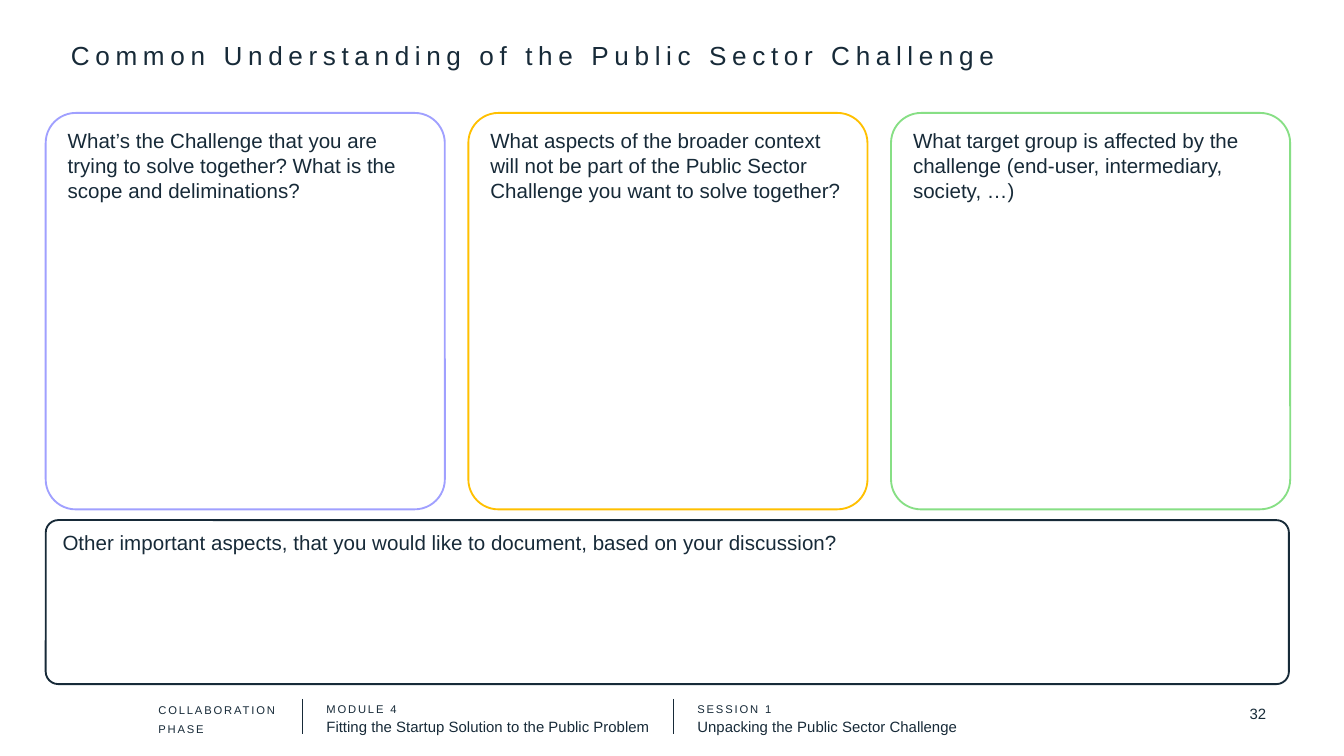
from lxml import etree
from pptx import Presentation
from pptx.dml.color import RGBColor
from pptx.enum.shapes import MSO_CONNECTOR, MSO_SHAPE
from pptx.enum.text import MSO_ANCHOR, PP_ALIGN
from pptx.oxml.ns import qn
from pptx.util import Inches, Pt

ROUND = MSO_SHAPE.ROUNDED_RECTANGLE
STRAIGHT = MSO_CONNECTOR.STRAIGHT
TOP, MIDDLE = MSO_ANCHOR.TOP, MSO_ANCHOR.MIDDLE
LEFT, RIGHT = PP_ALIGN.LEFT, PP_ALIGN.RIGHT

INK = RGBColor(0x17, 0x2A, 0x38)
LILAC = RGBColor(0xA0, 0xA0, 0xFF)
AMBER = RGBColor(0xFF, 0xC0, 0x00)
GREEN = RGBColor(0x87, 0xDF, 0x85)
FONT = "Arial"

EDGE, LAST = 0.34, 6.63
CARD_TOP = 0.84
CARD_W, CARD_H = 2.97, 2.95

CARDS = [
    (LILAC, "What’s the Challenge that you are trying to solve together? "
            "What is the scope and deliminations?"),
    (AMBER, "What aspects of the broader context will not be part of the "
            "Public Sector Challenge you want to solve together?"),
    (GREEN, "What target group is affected by the challenge "
            "(end-user, intermediary, society, …)"),
]
OTHER = ("Other important aspects, that you would like to document, "
         "based on your discussion?")


def add_run(par, text, size, track=0):
    """Add a run; track is the letter spacing in points."""
    run = par.add_run()
    run.text = text
    run.font.name = FONT
    run.font.size = Pt(size)
    run.font.color.rgb = INK
    if track:
        run._r.get_or_add_rPr().set("spc", str(track * 100))


def add_text(slide, box, lines, pitch=None, anchor=TOP, align=LEFT):
    """Add a text box with one paragraph per (text, size, track) line."""
    frame = slide.shapes.add_textbox(*map(Inches, box)).text_frame
    frame.word_wrap = True
    frame.vertical_anchor = anchor
    frame.margin_left = frame.margin_right = Inches(0.1)
    frame.margin_top = frame.margin_bottom = Inches(0.1)
    for i, line in enumerate(lines):
        par = frame.add_paragraph() if i else frame.paragraphs[0]
        par.alignment = align
        if pitch:
            par.line_spacing = Pt(pitch)
        add_run(par, *line)


def add_card(slide, box, color, text):
    card = slide.shapes.add_shape(ROUND, *map(Inches, box))
    card.adjustments[0] = 0.076
    card.shadow.inherit = False
    card.fill.background()
    card.line.color.rgb = color
    card.line.width = Pt(1)
    frame = card.text_frame
    frame.word_wrap = True
    frame.vertical_anchor = TOP
    par = frame.paragraphs[0]
    par.alignment = LEFT
    add_run(par, text, 11)


def add_rule(slide, x):
    """Add an upright footer divider."""
    rule = slide.shapes.add_connector(
        STRAIGHT, Inches(x), Inches(5.2), Inches(x), Inches(5.46))
    rule.line.color.rgb = INK
    rule.line.width = Pt(0.5)
    etree.SubElement(rule._element.spPr, qn("a:effectLst"))


def add_footer(slide):
    add_text(slide, (1.08, 5.09, 1.15, 0.47),
             [("COLLABORATION", 6, 1), ("PHASE", 6, 1)], 10.2)
    add_text(slide, (2.33, 5.08, 3.32, 0.47),
             [("MODULE 4", 6, 1),
              ("Fitting the Startup Solution to the Public Problem", 8)], 10.6)
    add_text(slide, (5.09, 5.08, 2.99, 0.47),
             [("SESSION 1", 6, 1),
              ("Unpacking the Public Sector Challenge", 8)], 10.6)
    for x in (2.25, 5.01):
        add_rule(slide, x)
    add_text(slide, (8.49, 5.16, 1.03, 0.3), [("32", 8)],
             anchor=MIDDLE, align=RIGHT)


def main():
    deck = Presentation()
    deck.slide_width = Inches(10)
    deck.slide_height = Inches(10 * 9 / 16)
    slide = deck.slides.add_slide(deck.slide_layouts[6])
    add_footer(slide)
    add_text(slide, (0.43, 0.19, 9.06, 0.48),
             [("Common Understanding of the Public Sector Challenge", 14, 3)])
    step = (LAST - EDGE) / (len(CARDS) - 1)
    for i, (color, text) in enumerate(CARDS):
        left = EDGE + i * step
        add_card(slide, (left, CARD_TOP, CARD_W, CARD_H), color, text)
    add_card(slide, (EDGE, 3.87, 9.25, 1.22), INK, OTHER)
    deck.save("out.pptx")


if __name__ == "__main__":
    main()
